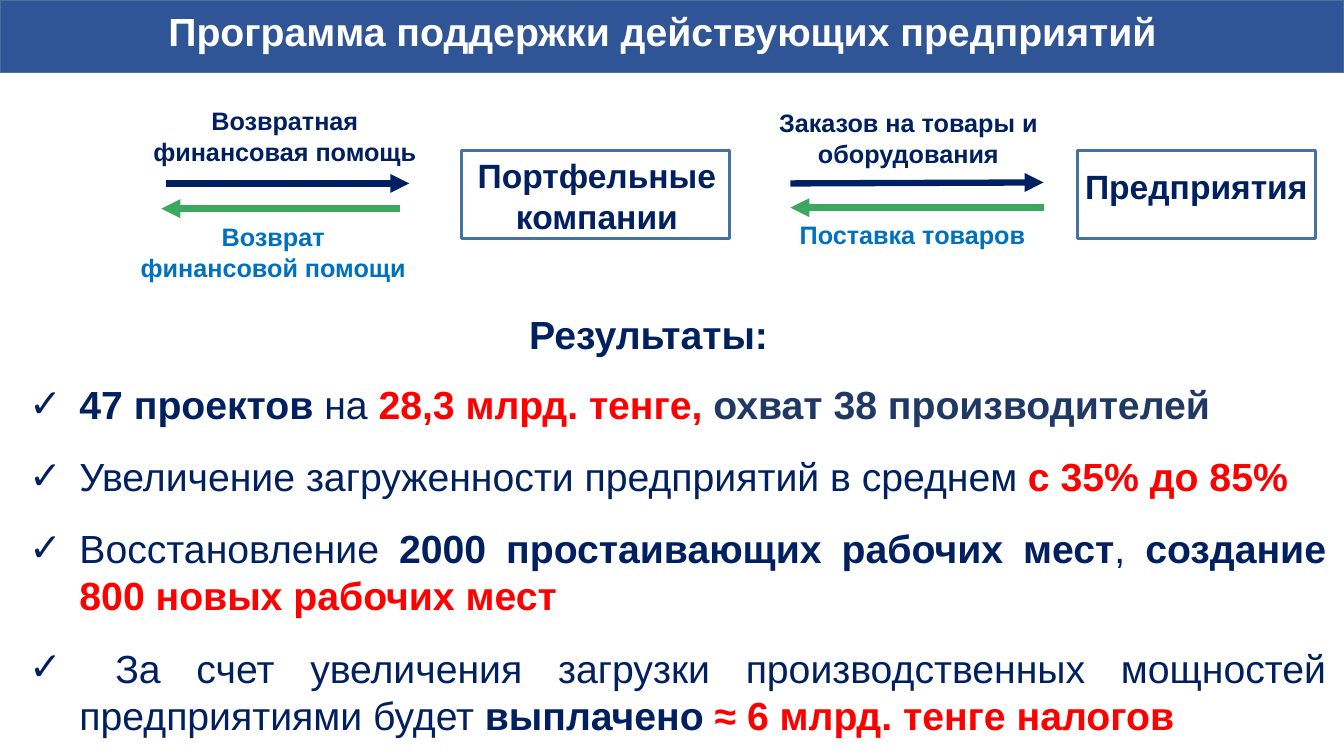
from pptx import Presentation
from pptx.dml.color import RGBColor
from pptx.enum import shapes, text
from pptx.oxml.ns import qn
from pptx.util import Inches, Pt
from lxml import etree

THEME = {
    "font": "Arial",
    "color": {"navy": "002060", "slate": "203864", "red": "FF0000", "blue": "0070C0",
              "green": "3AA85F", "white": "FFFFFF", "banner": "2F5597", "edge": "43739E"},
    "size": {"head": 28, "node": 24, "label": 18},
}

# Content: box (left, top, width, height), size, colour, lines
TITLE = ((0.32, 0, 12.5, 0.68), "head", "white", ["Программа поддержки действующих предприятий"])
LABELS = [
    ((1.24, 1, 3.17, 0.71), "label", "navy", ["Возвратная финансовая помощь"]),
    ((1.14, 2.15, 3.14, 0.71), "label", "blue", ["Возврат", "финансовой помощи"]),
    ((7.33, 1.02, 3.36, 0.71), "label", "navy", ["Заказов на товары и оборудования"]),
    ((7.75, 2.13, 2.6, 0.4), "label", "blue", ["Поставка товаров"]),
    ((4.43, 1.49, 2.98, 0.91), "node", "navy", ["Портфельные компании"]),
    ((10.49, 1.6, 2.75, 0.5), "node", "navy", ["Предприятия"]),
]
RESULTS_HEAD = ((5.15, 3.03, 2.6, 0.57), "head", "navy", ["Результаты:"])
NODES = [(4.58, 1.49, 2.66, 0.88), (10.69, 1.49, 2.36, 0.88)]
ARROWS = [  # x1, y1, x2, y2, colour
    (1.65, 1.82, 4.06, 1.82, "navy"),
    (3.97, 2.07, 1.6, 2.07, "green"),
    (7.84, 1.82, 10.35, 1.81, "navy"),
    (10.35, 2.06, 7.84, 2.06, "green"),
]
RESULTS_BOX = (0.19, 3.72, 13.06, 3.69)
RESULTS = [  # runs: text, colour, bold
    [("47 проектов ", "navy", True), ("на ", "navy", False),
     ("28,3 млрд. тенге, ", "red", True), ("охват 38 производителей", "slate", True)],
    [("Увеличение загруженности предприятий в среднем ", "navy", False),
     ("с 35% до 85%", "red", True)],
    [("Восстановление ", "navy", False), ("2000 простаивающих рабочих мест", "navy", True),
     (", ", "navy", False), ("создание ", "navy", True), ("800 новых рабочих мест", "red", True)],
    [(" За счет увеличения загрузки производственных мощностей предприятиями будет ",
      "navy", False),
     ("выплачено ", "navy", True), ("≈ 6 млрд. тенге налогов", "red", True)],
]


def rgb(name):
    return RGBColor.from_string(THEME["color"][name])


def style(r, size, color, bold=True):
    r.font.name = THEME["font"]
    r.font.size = Pt(THEME["size"][size])
    r.font.bold = bold
    r.font.color.rgb = rgb(color)


def add_rect(slide, box, weight, fill=None):
    sp = slide.shapes.add_shape(shapes.MSO_SHAPE.RECTANGLE, *map(Inches, box))
    sp.shadow.inherit = False
    if fill:
        sp.fill.solid()
        sp.fill.fore_color.rgb = rgb(fill)
    else:
        sp.fill.background()
    sp.line.color.rgb = rgb("edge")
    sp.line.width = Pt(weight)


def add_box(slide, box):
    tf = slide.shapes.add_textbox(*map(Inches, box)).text_frame
    tf.word_wrap = True
    tf.auto_size = text.MSO_AUTO_SIZE.SHAPE_TO_FIT_TEXT
    return tf


def add_label(slide, box, size, color, lines):
    tf = add_box(slide, box)
    tf.text = "\n".join(lines)
    for p in tf.paragraphs:
        p.alignment = text.PP_ALIGN.CENTER
        style(p.runs[0], size, color)
    return tf


def add_arrow(slide, x1, y1, x2, y2, color):
    line = slide.shapes.add_connector(shapes.MSO_CONNECTOR.STRAIGHT,
                                      *map(Inches, (x1, y1, x2, y2)))
    line.line.color.rgb = rgb(color)
    line.line.width = Pt(4.5)
    etree.SubElement(line.line._get_or_add_ln(), qn("a:tailEnd"), type="triangle")
    etree.SubElement(line._element.spPr, qn("a:effectLst"))


def add_check(p):
    pPr = p._p.get_or_add_pPr()
    pPr.set("marL", str(Inches(0.5)))
    pPr.set("indent", str(-Inches(0.5)))
    bu_clr = etree.SubElement(pPr, qn("a:buClr"))
    etree.SubElement(bu_clr, qn("a:srgbClr"), val=THEME["color"]["navy"])
    etree.SubElement(pPr, qn("a:buFont"), typeface=THEME["font"])
    etree.SubElement(pPr, qn("a:buChar"), char="✓")


def main():
    prs = Presentation()
    prs.slide_width, prs.slide_height = Inches(13.33), Inches(7.5)
    slide = prs.slides.add_slide(prs.slide_layouts[6])

    # Title banner
    add_rect(slide, (0, 0, 13.33, 0.72), 1, "banner")
    tf = add_label(slide, *TITLE)
    tf.auto_size = text.MSO_AUTO_SIZE.NONE
    tf.vertical_anchor = text.MSO_ANCHOR.MIDDLE
    tf.paragraphs[0].line_spacing = 0.9

    # Support scheme
    for arrow in ARROWS:
        add_arrow(slide, *arrow)
    for node in NODES:
        add_rect(slide, node, 2.25)
    for label in LABELS:
        add_label(slide, *label)

    # Results
    tf = add_label(slide, *RESULTS_HEAD)
    tf.word_wrap = False
    tf.paragraphs[0].alignment = text.PP_ALIGN.LEFT
    tf = add_box(slide, RESULTS_BOX)
    for i, runs in enumerate(RESULTS):
        p = tf.add_paragraph() if i else tf.paragraphs[0]
        add_check(p)
        p.alignment = text.PP_ALIGN.JUSTIFY
        p.space_before = Pt(9 if i else 0)
        p.space_after = Pt(9)
        for words, color, bold in runs:
            r = p.add_run()
            r.text = words
            style(r, "head", color, bold)

    prs.save("out.pptx")


if __name__ == "__main__":
    main()
